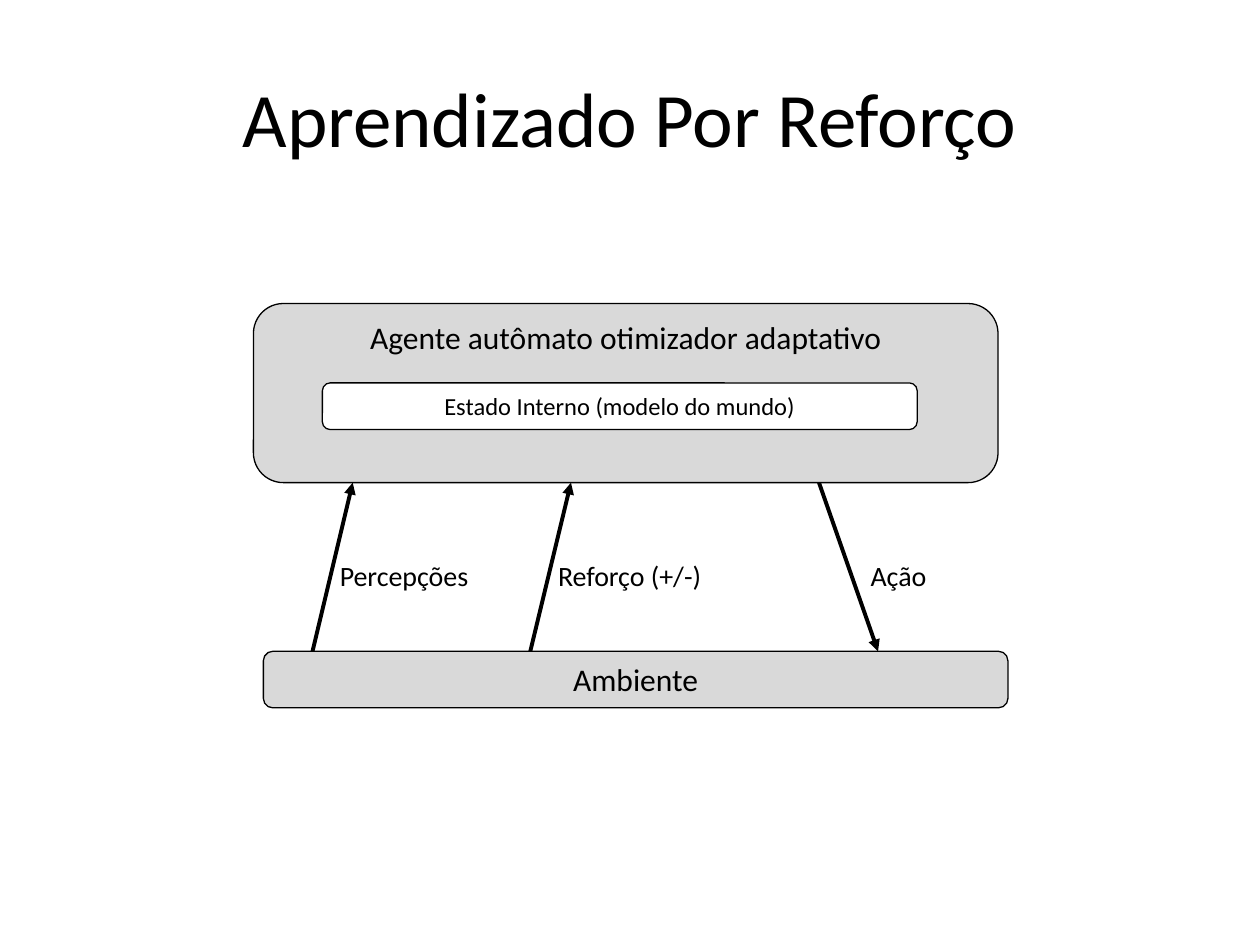
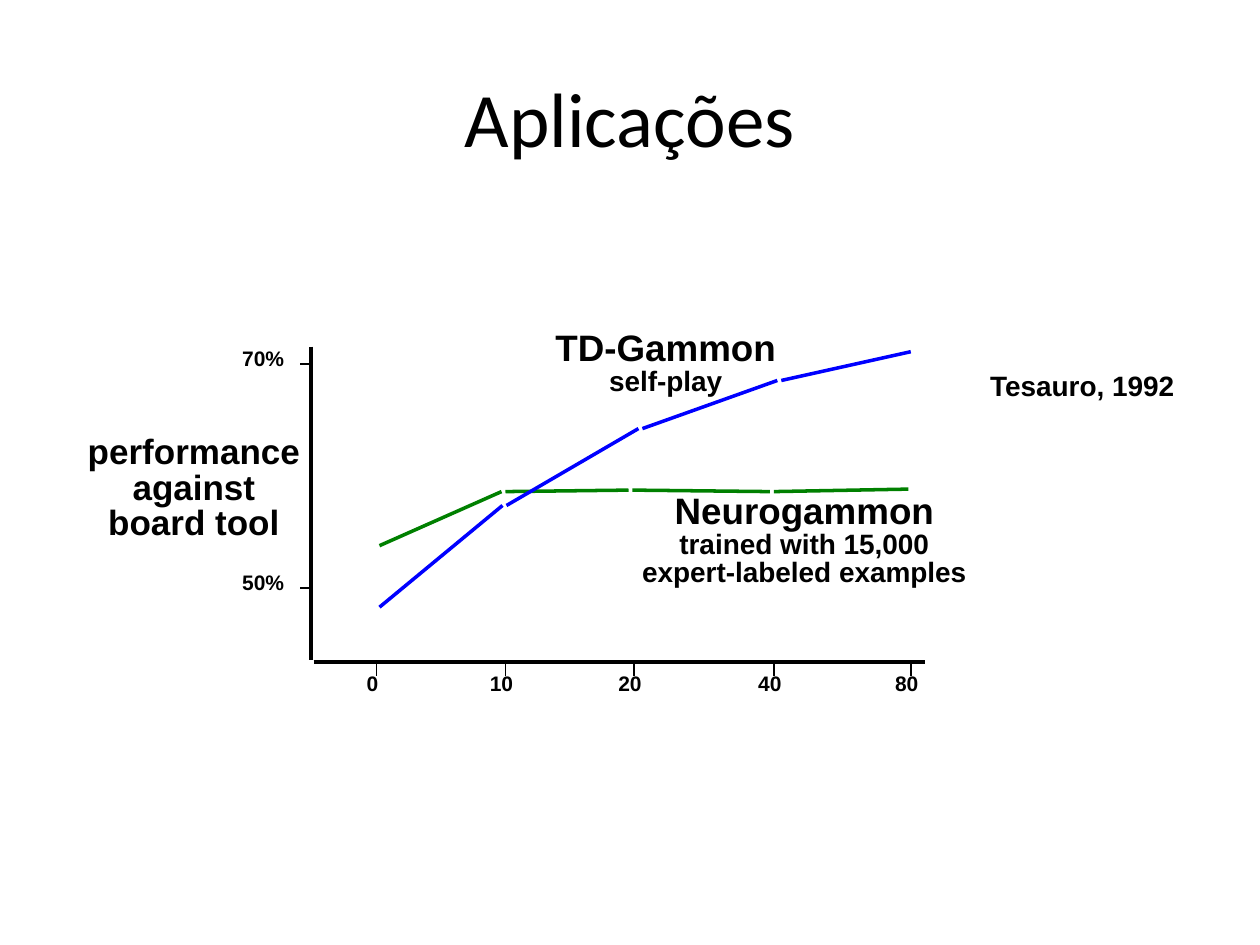
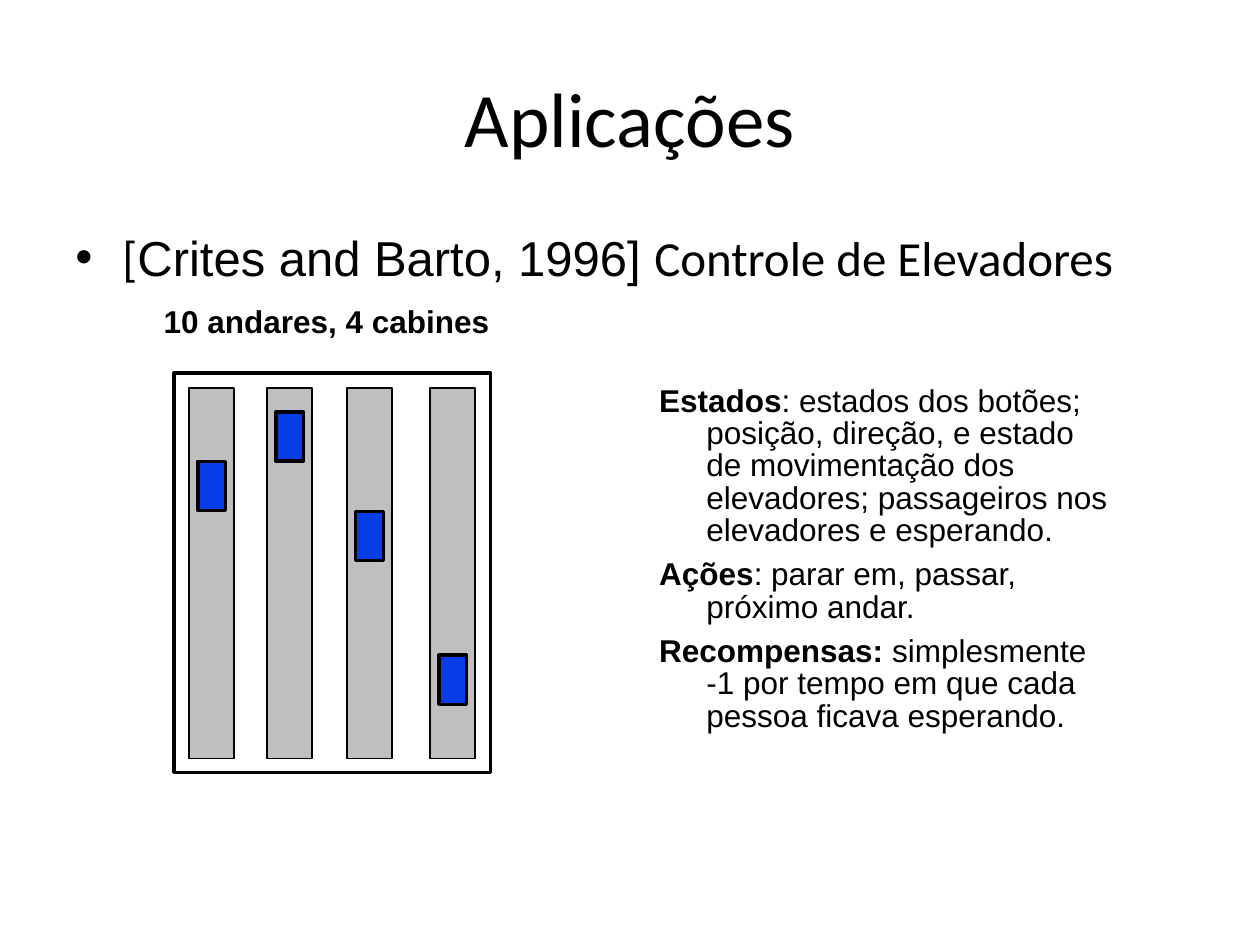
from dataclasses import dataclass
from itertools import pairwise

import pptx
import pptx.dml.color
import pptx.enum.shapes
import pptx.enum.text
import pptx.oxml
import pptx.oxml.ns
import pptx.util
from pptx.util import Cm

ALIGN = pptx.enum.text.PP_ALIGN
ANCHOR = pptx.enum.text.MSO_ANCHOR
SHAPE = pptx.enum.shapes.MSO_SHAPE
NAMESPACE = pptx.oxml.ns.nsdecls("a")


@dataclass(frozen=True)
class TextStyle:
    font: str
    size: int
    bold: bool = False


@dataclass(frozen=True)
class Theme:
    # Colours
    black: str = "000000"
    white: str = "FFFFFF"
    panel: str = "D9D9D9"
    shaft: str = "BFBFBF"
    car: str = "063DE8"
    green: str = "008000"
    blue: str = "0000FF"
    # Text styles
    title: TextStyle = TextStyle("Calibri", 44)
    bullet: TextStyle = TextStyle("Calibri", 28)
    citation: TextStyle = TextStyle("Arial", 28)
    block: TextStyle = TextStyle("Calibri", 18)
    inner_block: TextStyle = TextStyle("Calibri", 14)
    arrow_label: TextStyle = TextStyle("Calibri", 16)
    series: TextStyle = TextStyle("Arial", 21, True)
    axis_title: TextStyle = TextStyle("Arial", 20, True)
    detail: TextStyle = TextStyle("Arial", 16, True)
    tick: TextStyle = TextStyle("Arial", 12, True)
    term: TextStyle = TextStyle("Arial", 18, True)
    definition: TextStyle = TextStyle("Arial", 18)
    # Insets, horizontal and vertical, in centimetres
    normal_inset: tuple = (0.25, 0.13)
    medium_inset: tuple = (0.18, 0.08)
    tight_inset: tuple = (0.15, 0.05)


class Deck:
    """Holds the theme and the slide being built; boxes are in centimetres."""

    def __init__(self, theme):
        self.theme = theme
        self.presentation = pptx.Presentation()
        self.presentation.slide_width = Cm(25.4)
        self.presentation.slide_height = Cm(19.05)
        self.slide = None

    def new_slide(self, title):
        self.slide = self.presentation.slides.add_slide(self.presentation.slide_layouts[6])
        self.text((1.27, 0.76, 22.86, 3.18), [[(title, self.theme.title)]],
                  align=ALIGN.CENTER, anchor=ANCHOR.MIDDLE, wrap=True)

    def fill_text(self, text_frame, paragraphs, align=ALIGN.LEFT, spacing=1.0,
                  gap=0, hanging=0, bullet=None):
        """Fill a frame; each paragraph is a list of (text, style) pairs."""
        for index, parts in enumerate(paragraphs):
            paragraph = text_frame.add_paragraph() if index else text_frame.paragraphs[0]
            paragraph.alignment = align
            paragraph.line_spacing = spacing
            paragraph.space_before = pptx.util.Pt(gap if index else 0)
            properties = paragraph._p.get_or_add_pPr()
            if hanging:
                properties.set("marL", str(Cm(hanging)))
                properties.set("indent", str(-Cm(hanging)))
            if bullet:
                properties.append(pptx.oxml.parse_xml(f'<a:buFont {NAMESPACE} typeface="Arial"/>'))
                properties.append(pptx.oxml.parse_xml(f'<a:buChar {NAMESPACE} char="{bullet}"/>'))
            for words, style in parts:
                run = paragraph.add_run()
                run.text = words
                run.font.name = style.font
                run.font.size = pptx.util.Pt(style.size)
                run.font.bold = style.bold
                run.font.color.rgb = self.colour(self.theme.black)

    def text(self, box, paragraphs, inset=None, anchor=ANCHOR.TOP, wrap=False, **layout):
        text_frame = self.slide.shapes.add_textbox(*map(Cm, box)).text_frame
        horizontal, vertical = map(Cm, inset or self.theme.normal_inset)
        text_frame.margin_left = text_frame.margin_right = horizontal
        text_frame.margin_top = text_frame.margin_bottom = vertical
        text_frame.vertical_anchor = anchor
        text_frame.word_wrap = wrap
        self.fill_text(text_frame, paragraphs, **layout)

    def tight_text(self, box, lines, align=ALIGN.CENTER):
        self.text(box, [[line] for line in lines], inset=self.theme.tight_inset,
                  align=align, spacing=0.85)

    def block(self, box, fill=None, width=1.0, kind=SHAPE.RECTANGLE, label=None):
        shape = self.slide.shapes.add_shape(kind, *map(Cm, box))
        shape.shadow.inherit = False
        if fill:
            shape.fill.solid()
            shape.fill.fore_color.rgb = self.colour(fill)
        else:
            shape.fill.background()
        shape.line.color.rgb = self.colour(self.theme.black)
        shape.line.width = pptx.util.Pt(width)
        if label:
            shape.text_frame.vertical_anchor = ANCHOR.TOP
            self.fill_text(shape.text_frame, [[label]], align=ALIGN.CENTER)

    def line(self, start, end, width=1.0, colour=None, arrow=False):
        connector = self.slide.shapes.add_connector(
            pptx.enum.shapes.MSO_CONNECTOR.STRAIGHT, *map(Cm, (*start, *end)))
        connector.line.color.rgb = self.colour(colour or self.theme.black)
        connector.line.width = pptx.util.Pt(width)
        if arrow:
            connector.line._get_or_add_ln().append(
                pptx.oxml.parse_xml(f'<a:tailEnd {NAMESPACE} type="triangle"/>'))
        connector._element.spPr.append(pptx.oxml.parse_xml(f"<a:effectLst {NAMESPACE}/>"))

    @staticmethod
    def colour(value):
        return pptx.dml.color.RGBColor.from_string(value)


def build_reinforcement_slide(deck):
    theme = deck.theme
    deck.new_slide("Aprendizado Por Reforço")
    agent_bottom, environment_top = 9.73, 13.13

    # Agent, its internal state and the environment
    for box, fill, words, style in (
        ((5.11, 6.12, 15.01, 3.61), theme.panel, "Agente autômato otimizador adaptativo", theme.block),
        ((6.5, 7.72, 11.99, 0.94), theme.white, "Estado Interno (modelo do mundo)", theme.inner_block),
        ((5.31, environment_top, 15.01, 1.14), theme.panel, "Ambiente", theme.block),
    ):
        deck.block(box, fill, 0.75, SHAPE.ROUNDED_RECTANGLE, (words, style))

    # Signals between agent and environment
    for agent_x, environment_x, upward, words, label_x, label_width in (
        (7.11, 6.3, True, "Percepções", 6.6, 3.15),
        (11.51, 10.69, True, "Reforço (+/-)", 11, 3.45),
        (16.51, 17.7, False, "Ação", 17.3, 1.65),
    ):
        ends = [(agent_x, agent_bottom), (environment_x, environment_top)]
        start, end = reversed(ends) if upward else ends
        deck.line(start, end, 2.25, arrow=True)
        deck.text((label_x, 11.13, label_width, 0.94), [[(words, theme.arrow_label)]])


def build_gammon_slide(deck):
    theme = deck.theme
    deck.new_slide("Aplicações")

    # Axes
    deck.line((6.27, 6.99), (6.27, 13.31), 2)
    deck.line((6.32, 13.34), (18.64, 13.34), 2)
    for words, y in (("70%", 7.34), ("50%", 11.86)):
        deck.line((6.05, y), (6.22, y))
        deck.tight_text((4.72, y - 0.35, 1.17, 0.56), [(words, theme.tick)])
    for words, x in (("0", 7.59), ("10", 10.19), ("20", 12.78), ("40", 15.6), ("80", 18.36)):
        deck.line((x, 13.36), (x, 13.62))
        deck.tight_text((x - 0.48, 13.55, 0.8, 0.56), [(words, theme.tick)])

    # Series, with a small gap before each point
    point_gap = 0.08
    for colour, points in (
        (theme.green, [(7.65, 11), (10.19, 9.91), (12.75, 9.88), (15.6, 9.91), (18.39, 9.86)]),
        (theme.blue, [(7.65, 12.24), (10.21, 10.19), (12.95, 8.64), (15.75, 7.67), (18.44, 7.09)]),
    ):
        for start, (end_x, end_y) in pairwise(points):
            deck.line(start, (end_x - point_gap, end_y), 2, colour)

    # Labels
    deck.tight_text((1.6, 8.74, 4.62, 2.31),
                    [(words, theme.axis_title) for words in ("performance", "against", "board tool")])
    deck.tight_text((11.02, 6.63, 4.8, 1.47),
                    [("TD-Gammon", theme.series), ("self-play", theme.detail)])
    deck.tight_text((12.75, 9.91, 6.93, 2.06),
                    [("Neurogammon", theme.series), ("trained with 15,000", theme.detail),
                     ("expert-labeled examples", theme.detail)])
    deck.tight_text((19.81, 7.49, 4.06, 0.71), [("Tesauro, 1992", theme.detail)], ALIGN.LEFT)


def build_elevator_slide(deck):
    theme = deck.theme
    deck.new_slide("Aplicações")
    deck.text((1.27, 4.45, 22.86, 12.57),
              [[("[", theme.bullet), ("Crites and Barto, 1996] ", theme.citation),
                ("Controle de Elevadores", theme.bullet)]],
              wrap=True, hanging=0.95, bullet="•")
    deck.text((3.12, 6.12, 6.98, 0.81), [[("10 andares, 4 cabines", theme.term)]],
              inset=theme.medium_inset, spacing=0.87)

    # Building with one car in each shaft
    deck.block((3.51, 7.52, 6.38, 8.05), width=2)
    for shaft_x, car_y in ((3.81, 9.3), (5.38, 8.31), (6.99, 10.31), (8.67, 13.21)):
        deck.block((shaft_x, 7.82, 0.91, 7.47), theme.shaft)
        deck.block((shaft_x + 0.18, car_y, 0.56, 0.99), theme.car, 2)

    # Problem definition
    definitions = (
        ("Estados", ": estados dos botões; posição, direção, e estado de movimentação dos "
                    "elevadores; passageiros nos elevadores e esperando."),
        ("Ações", ": parar em, passar, próximo andar."),
        ("Recompensas: ", "simplesmente -1 por tempo em que cada pessoa ficava esperando."),
    )
    deck.text((13.11, 7.72, 9.5, 7.29),
              [[(term, theme.term), (meaning, theme.definition)] for term, meaning in definitions],
              inset=theme.medium_inset, wrap=True, spacing=0.85, gap=7.2, hanging=0.95)


def main():
    deck = Deck(Theme())
    build_reinforcement_slide(deck)
    build_gammon_slide(deck)
    build_elevator_slide(deck)
    deck.presentation.save("out.pptx")


if __name__ == "__main__":
    main()
